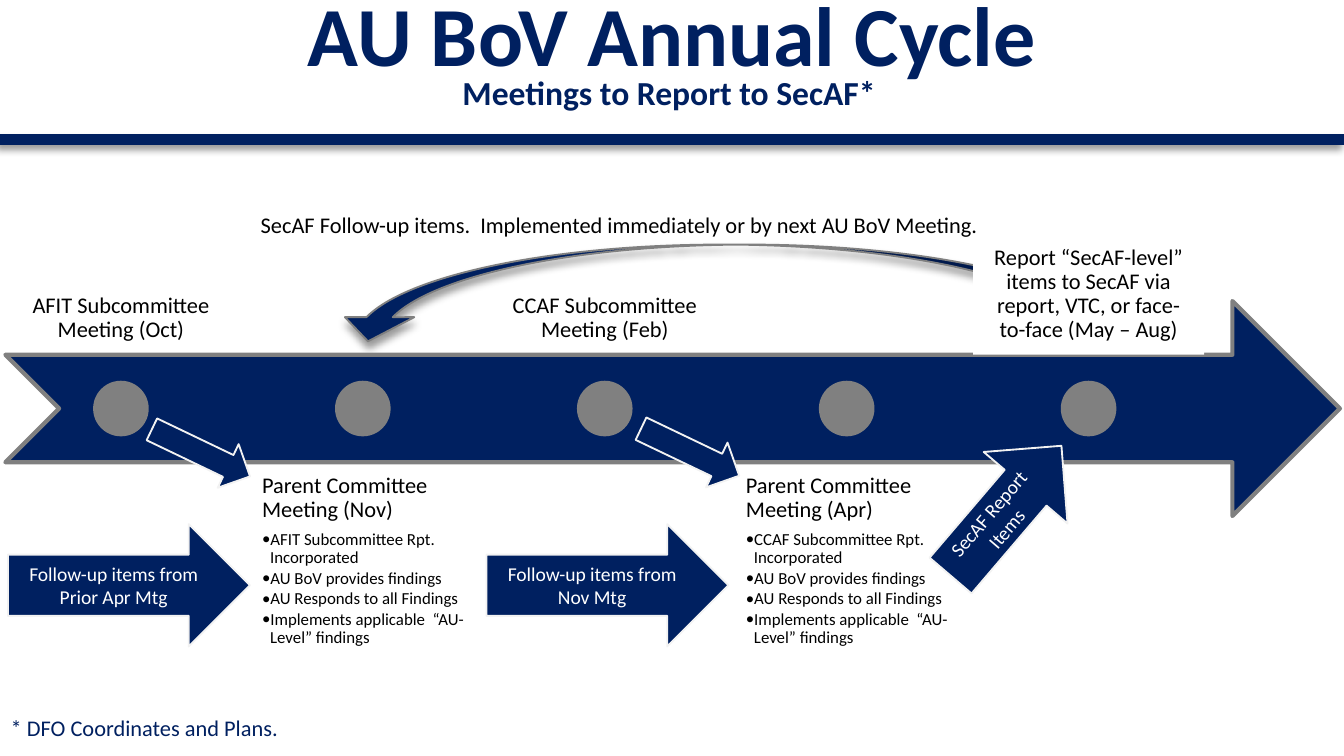
"""Build the annual cycle timeline slide."""
from lxml import etree
from pptx import Presentation
from pptx import util as u
from pptx.dml.color import RGBColor
from pptx.enum import shapes, text
from pptx.oxml.ns import qn

COLORS = {"navy": "002060", "gray": "808080", "pale": "F2F2F2",
          "white": "FFFFFF", "black": "000000"}
KINDS = shapes.MSO_SHAPE
LEFT, CENTER = text.PP_ALIGN.LEFT, text.PP_ALIGN.CENTER
TOP, MIDDLE, BOTTOM = text.MSO_ANCHOR.TOP, text.MSO_ANCHOR.MIDDLE, text.MSO_ANCHOR.BOTTOM


def add_block(kind, box, fill, line=None, width=1):
    block = slide.shapes.add_shape(kind, *map(u.Inches, box))
    block.shadow.inherit = False
    block.fill.solid()
    block.fill.fore_color.rgb = RGBColor.from_string(COLORS[fill])
    if line:
        block.line.color.rgb = RGBColor.from_string(COLORS[line])
        block.line.width = u.Pt(width)
    else:
        block.line.fill.background()
    return block


def write(holder, words, size, color="black", align=CENTER, anchor=TOP,
          spacing=0.9, bold=False, inset=(0.1, 0.05)):
    frame = holder.text_frame
    frame.text = words
    frame.word_wrap = True
    frame.auto_size = text.MSO_AUTO_SIZE.NONE
    frame.vertical_anchor = anchor
    frame.margin_left = frame.margin_right = u.Inches(inset[0])
    frame.margin_top = frame.margin_bottom = u.Inches(inset[1])
    for paragraph in frame.paragraphs:
        paragraph.alignment = align
        paragraph.line_spacing = spacing
        for run in paragraph.runs:
            run.font.name = "Calibri"
            run.font.size = u.Pt(size)
            run.font.bold = bold
            run.font.color.rgb = RGBColor.from_string(COLORS[color])
    return frame


deck = Presentation()
deck.slide_width = u.Inches(10)
deck.slide_height = deck.slide_width * 9 // 16
slide = deck.slides.add_slide(deck.slide_layouts[5])

title = slide.shapes.title
title.left, title.top = u.Inches(1.25), u.Inches(-1.28)
title.width, title.height = u.Inches(7.5), u.Inches(1.96)
write(title, "AU BoV Annual Cycle", 45, "navy", anchor=BOTTOM, bold=True)

follow_up_arc = add_block(KINDS.CURVED_UP_ARROW, (2.48, 1.82, 5.81, 0.72), "navy", "gray")
for index, value in enumerate((0.271, 0.717, 0.25)):
    follow_up_arc.adjustments[index] = value
for flip in ("flipH", "flipV"):
    follow_up_arc._element.spPr.xfrm.set(flip, "1")

subtitle = slide.shapes.add_textbox(*map(u.Inches, (1.23, 0.52, 7.5, 1.36)))
write(subtitle, "Meetings to Report to SecAF*", 18, "navy", bold=True)

add_block(KINDS.NOTCHED_RIGHT_ARROW, (0.04, 2.24, 9.93, 1.6), "navy", "gray", 2.25)

findings = ["AU BoV provides findings", "AU Responds to all Findings",
            "Implements applicable  “AU-Level” findings"]
milestones = [
    ("AFIT Subcommittee Meeting (Oct)", []),
    ("Parent Committee Meeting (Nov)", ["AFIT Subcommittee Rpt. Incorporated"] + findings),
    ("CCAF Subcommittee Meeting (Feb)", []),
    ("Parent Committee Meeting (Apr)", ["CCAF Subcommittee Rpt. Incorporated"] + findings),
    ("Report “SecAF-level” items to SecAF via report, VTC, or face-to-face (May – Aug)", []),
]
for index, (heading, details) in enumerate(milestones):
    offset = 1.8 * index
    box = (0.04 + offset, 3.44 if details else 1.04, 1.72, 1.6)
    if index == len(milestones) - 1:
        add_block(KINDS.RECTANGLE, box, "white")
    label = slide.shapes.add_textbox(*map(u.Inches, box))
    frame = write(label, "\n".join([heading] + details), 12,
                  align=LEFT if details else CENTER,
                  anchor=TOP if details else BOTTOM, inset=(0.11, 0.09))
    frame.paragraphs[0].space_after = u.Pt(4.2)
    for detail in frame.paragraphs[1:]:
        detail.level = 1
        detail.space_after = u.Pt(1.35)
        properties = detail._p.get_or_add_pPr()
        properties.set("marL", str(u.Inches(0.06)))
        properties.set("indent", str(u.Inches(-0.06)))
        etree.SubElement(properties, qn("a:buFont"), typeface="Calibri")
        etree.SubElement(properties, qn("a:buChar"), char="•")
        detail.runs[0].font.size = u.Pt(9)
    add_block(KINDS.OVAL, (0.7 + offset, 2.84, 0.4, 0.4), "gray", "gray")

footnote = slide.shapes.add_textbox(*map(u.Inches, (0, 5.31, 9.96, 0.24)))
write(footnote, "* DFO Coordinates and Plans.", 12, "navy", LEFT,
      spacing=0.8, inset=(0.08, 0.04))

follow_up = slide.shapes.add_textbox(*map(u.Inches, (0.04, 1.52, 9.14, 0.3)))
write(follow_up, "SecAF Follow-up items.  Implemented immediately or by next AU BoV Meeting.",
      12, spacing=1.0)

flows = [
    ((1.09, 3.19, 0.81, 0.36), 25.6, ""),
    ((4.73, 3.18, 0.81, 0.37), 25.6, ""),
    ((3.62, 3.9, 1.8, 0.91), 0, "Follow-up items from Nov Mtg"),
    ((0.06, 3.9, 1.8, 0.91), 0, "Follow-up items from Prior Apr Mtg"),
    ((6.85, 3.39, 1.27, 0.82), 310.5, "SecAF Report Items"),
]
for box, angle, words in flows:
    flow = add_block(KINDS.RIGHT_ARROW, box, "navy", "pale")
    flow.rotation = angle
    if words:
        write(flow, words, 10.5, "white", anchor=MIDDLE, spacing=1.0)

header_rule = slide.shapes.add_connector(
    shapes.MSO_CONNECTOR.STRAIGHT, 0, u.Inches(1.04), u.Inches(10), u.Inches(1.04))
header_rule.line.color.rgb = RGBColor.from_string(COLORS["navy"])
header_rule.line.width = u.Pt(6)
etree.SubElement(header_rule._element.spPr, qn("a:effectLst"))

for shaded, direction in ((follow_up_arc, 90), (header_rule, 135)):
    effects = shaded._element.spPr.find(qn("a:effectLst"))
    shadow = etree.SubElement(effects, qn("a:outerShdw"), blurRad=str(u.Pt(4)),
                              dist=str(u.Pt(3)), dir=str(direction * 60000),
                              algn="t", rotWithShape="0")
    tint = etree.SubElement(shadow, qn("a:srgbClr"), val=COLORS["black"])
    etree.SubElement(tint, qn("a:alpha"), val="40000")

deck.save("out.pptx")
